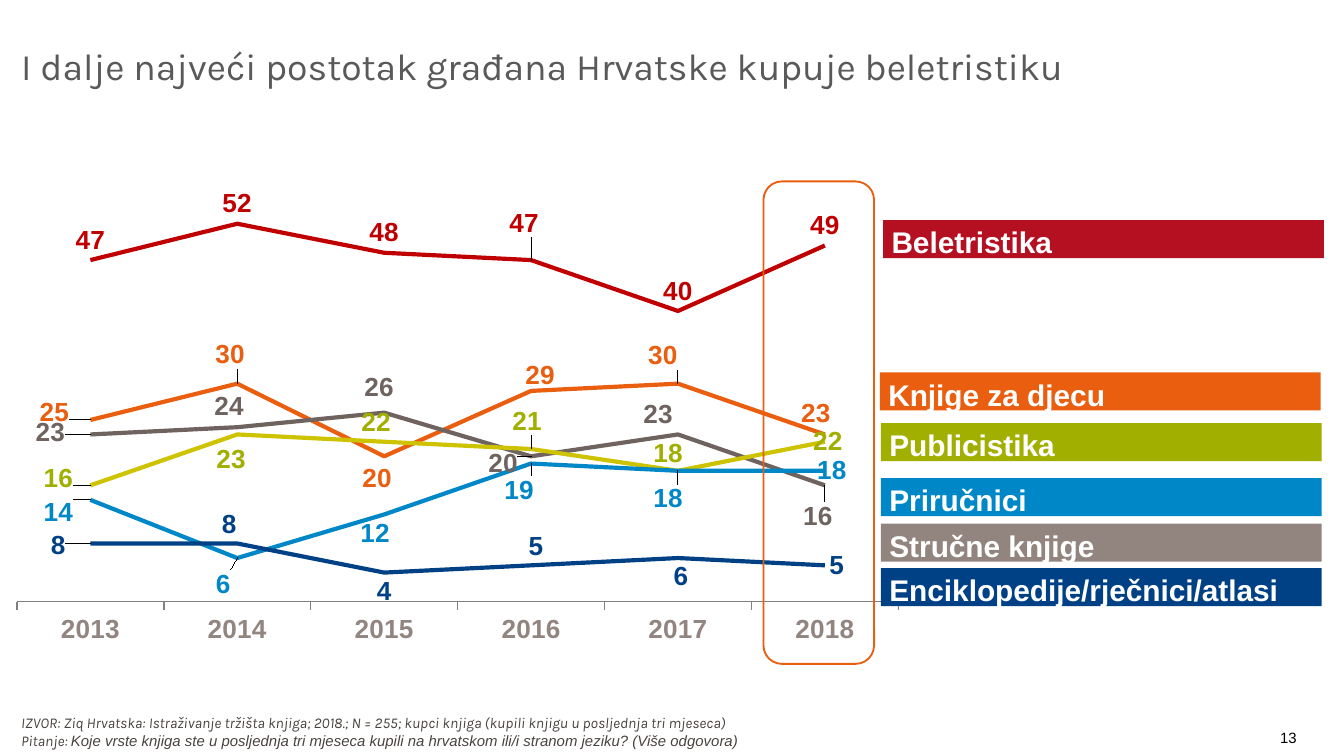
"""Build the slide on the book genres bought in Croatia, 2013 to 2018."""
from typing import NamedTuple

from lxml import etree
from pptx import Presentation
from pptx import util as u
from pptx.chart.data import CategoryChartData
from pptx.dml.color import RGBColor
from pptx.enum import chart as ch, shapes, text
from pptx.oxml.ns import qn

HUES = {
    "red": "C00000", "crimson": "B50F22", "orange": "E95E0F", "brown": "6F635F",
    "taupe": "928580", "lime": "CDC300", "olive": "A1AF00", "blue": "0087C8",
    "navy": "004186", "title": "595959", "note": "4A423F", "axis": "808080",
    "black": "000000", "white": "FFFFFF",
}
YEARS = ("2013", "2014", "2015", "2016", "2017", "2018")
GRID = (900, 513)
KIND = shapes.MSO_SHAPE
ALIGN = text.PP_ALIGN


class Box(NamedTuple):
    """Place and size in centimetres."""
    left: float
    top: float
    width: float
    height: float


class Trend(NamedTuple):
    """One line of the chart, with label shifts in grid units by point."""
    hue: str
    ink: str
    vals: tuple
    shifts: dict


class Tag(NamedTuple):
    """One genre bar beside the chart."""
    name: str
    hue: str
    left: float
    top: float


class Run(NamedTuple):
    """One piece of text with its look."""
    words: str
    size: float
    hue: str
    font: str = "Arial"
    bold: bool = False
    slant: bool = False


TRENDS = (
    Trend("red", "red", (47, 52, 48, 47, 40, 49), {3: (-7, -17)}),
    Trend("orange", "orange", (25, 30, 20, 29, 30, 23), dict(enumerate(
        ((-36, 12), (-7, -9), (-7, 42), (9, 5), (-15, -8), (-9, -1))))),
    Trend("brown", "brown", (23, 24, 26, 20, 23, 16), dict(enumerate(
        ((-40, 18), (-8, -1), (-5, -5), (-28, 27), (-20, 0), (-7, 51))))),
    Trend("lime", "olive", (16, 23, 22, 21, 18, 22), dict(enumerate(
        ((-32, 13), (-6, 45), (-8, 1), (-4, -8), (-10, 3), (3, 20))))),
    Trend("blue", "blue", (14, 6, 12, 19, 18, 18), dict(enumerate(
        ((-32, 33), (-14, 46), (-9, 39), (-12, 47), (-10, 48), (7, 20))))),
    Trend("navy", "navy", (8, 8, 4, 5, 6, 5), dict(enumerate(
        ((-32, 22), (-8, 1), (0, 39), (5, 1), (3, 38), (12, 20))))),
)
TAGS = (
    Tag("Beletristika", "crimson", 16.69, 4.16),
    Tag("Knjige za djecu", "orange", 16.63, 7.04),
    Tag("Stručne knjige", "taupe", 16.65, 9.9),
    Tag("Priručnici", "blue", 16.65, 9.04),
    Tag("Publicistika", "olive", 16.65, 8),
    Tag("Enciklopedije/rječnici/atlasi", "navy", 16.65, 10.74),
)


def tint(name: str) -> RGBColor:
    """Give a named colour."""
    return RGBColor.from_string(HUES[name])


def style(font, size: float, hue: str, bold: bool = False, face: str = "Arial") -> None:
    """Set the look of a font."""
    font.size, font.bold, font.name = u.Pt(size), bold, face
    font.color.rgb = tint(hue)


def shape(slide, kind, box: Box, fill: str = "", line: str = ""):
    """Draw a preset shape without shadow."""
    item = slide.shapes.add_shape(kind, *map(u.Cm, box))
    item.shadow.inherit = False
    if fill:
        item.fill.solid()
        item.fill.fore_color.rgb = tint(fill)
    else:
        item.fill.background()
    if line:
        item.line.color.rgb = tint(line)
        item.line.width = u.Pt(1)
    else:
        item.line.fill.background()
    return item


def write(item, lines: tuple, align, pads: tuple = ()) -> None:
    """Fill a shape with lines of runs."""
    frame = item.text_frame
    frame.word_wrap = True
    frame.vertical_anchor = text.MSO_ANCHOR.MIDDLE
    if pads:
        (frame.margin_left, frame.margin_top,
         frame.margin_right, frame.margin_bottom) = map(u.Cm, pads)
    for spot, line in enumerate(lines):
        para = frame.add_paragraph() if spot else frame.paragraphs[0]
        para.alignment = align
        for part in line:
            run = para.add_run()
            run.text = part.words
            style(run.font, part.size, part.hue, part.bold, part.font)
            run.font.italic = part.slant


def layout(host, spot: int, **vals) -> None:
    """Insert a manual layout into a chart element."""
    node = etree.Element(qn("c:layout"))
    manual = etree.SubElement(node, qn("c:manualLayout"))
    for key, val in vals.items():
        etree.SubElement(manual, qn(f"c:{key}")).set("val", str(val))
    for old in host.findall(qn("c:layout")):
        host.remove(old)
    host.insert(spot, node)


def label(line, trend: Trend) -> None:
    """Label a line with its values, moving those that are shifted."""
    labels = line.data_labels
    labels.show_value = True
    labels.position = ch.XL_LABEL_POSITION.ABOVE
    style(labels.font, 14, trend.ink, True)
    for spot, (right, down) in trend.shifts.items():
        mark = line.points[spot].data_label
        style(mark.font, 14, trend.ink, True)
        mark.position = ch.XL_LABEL_POSITION.ABOVE
        node = next(n for n in labels._element.findall(qn("c:dLbl"))
                    if n.find(qn("c:idx")).get("val") == str(spot))
        layout(node, 1, x=round(right / GRID[0], 4), y=round(down / GRID[1], 4))


def plot(slide, box: Box) -> None:
    """Draw the line chart."""
    data = CategoryChartData()
    data.categories = YEARS
    for count, trend in enumerate(TRENDS, 1):
        data.add_series(f"Series {count}", trend.vals)
    chart = slide.shapes.add_chart(
        ch.XL_CHART_TYPE.LINE, *map(u.Cm, box), data).chart
    chart.has_legend = chart.has_title = False
    style(chart.font, 10, "black")
    high, base = chart.value_axis, chart.category_axis
    high.minimum_scale, high.maximum_scale = 0, 60
    high.has_major_gridlines = high.visible = False
    base.major_tick_mark = ch.XL_TICK_MARK.OUTSIDE
    base.format.line.color.rgb = tint("axis")
    style(base.tick_labels.font, 14, "taupe", True)
    area = chart._chartSpace.chart.plotArea
    layout(area, 0, layoutTarget="inner", xMode="edge", yMode="edge",
           x=0.01, y=0.03, w=0.98, h=0.85)
    for line, trend in zip(chart.plots[0].series, TRENDS):
        line.smooth = False
        line.marker.style = ch.XL_MARKER_STYLE.NONE
        line.format.line.color.rgb = tint(trend.hue)
        line.format.line.width = u.Pt(2.25)
        label(line, trend)


def main() -> None:
    """Build and save the slide."""
    deck = Presentation()
    deck.slide_width, deck.slide_height = u.Cm(25.4), u.Cm(14.29)
    slide = deck.slides.add_slide(deck.slide_layouts[6])
    page = shape(slide, KIND.RECTANGLE, Box(20.9, 13.74, 3.61, 0.41), "white")
    write(page, ((Run("13", 8, "black"),),), ALIGN.RIGHT, (0, 0, 0, 0))
    head = shape(slide, KIND.FLOWCHART_PROCESS, Box(0.15, 0.53, 21.72, 1.42))
    write(head, ((Run("I dalje najveći postotak građana Hrvatske kupuje beletristiku",
                      20, "title", "Karla"),),), ALIGN.JUSTIFY)
    foot = shape(slide, KIND.FLOWCHART_PROCESS, Box(0.15, 13.44, 19.81, 0.76))
    write(foot, (
        (Run("IZVOR: Ziq Hrvatska: Istraživanje tržišta knjiga; 2018.; N = 255; "
             "kupci knjiga (kupili knjigu u posljednja tri mjeseca)",
             8, "note", "Karla", slant=True),),
        (Run("Pitanje: ", 8, "note", "Karla", slant=True),
         Run("Koje vrste knjiga ste u posljednja tri mjeseca kupili na hrvatskom "
             "ili/i stranom jeziku? (Više odgovora)", 8, "note", slant=True)),
    ), ALIGN.JUSTIFY)
    plot(slide, Box(0.15, 2.84, 17, 9.7))
    for tag in TAGS:
        bar = shape(slide, KIND.RECTANGLE, Box(tag.left, tag.top, 8.33, 0.72), tag.hue)
        write(bar, ((Run(tag.name, 16, "white", bold=True),),),
              ALIGN.LEFT, (0.16, 0.1, 0, 0))
    shape(slide, KIND.ROUNDED_RECTANGLE, Box(14.43, 3.43, 2.09, 9.12), line="orange")
    deck.save("out.pptx")


if __name__ == "__main__":
    main()
